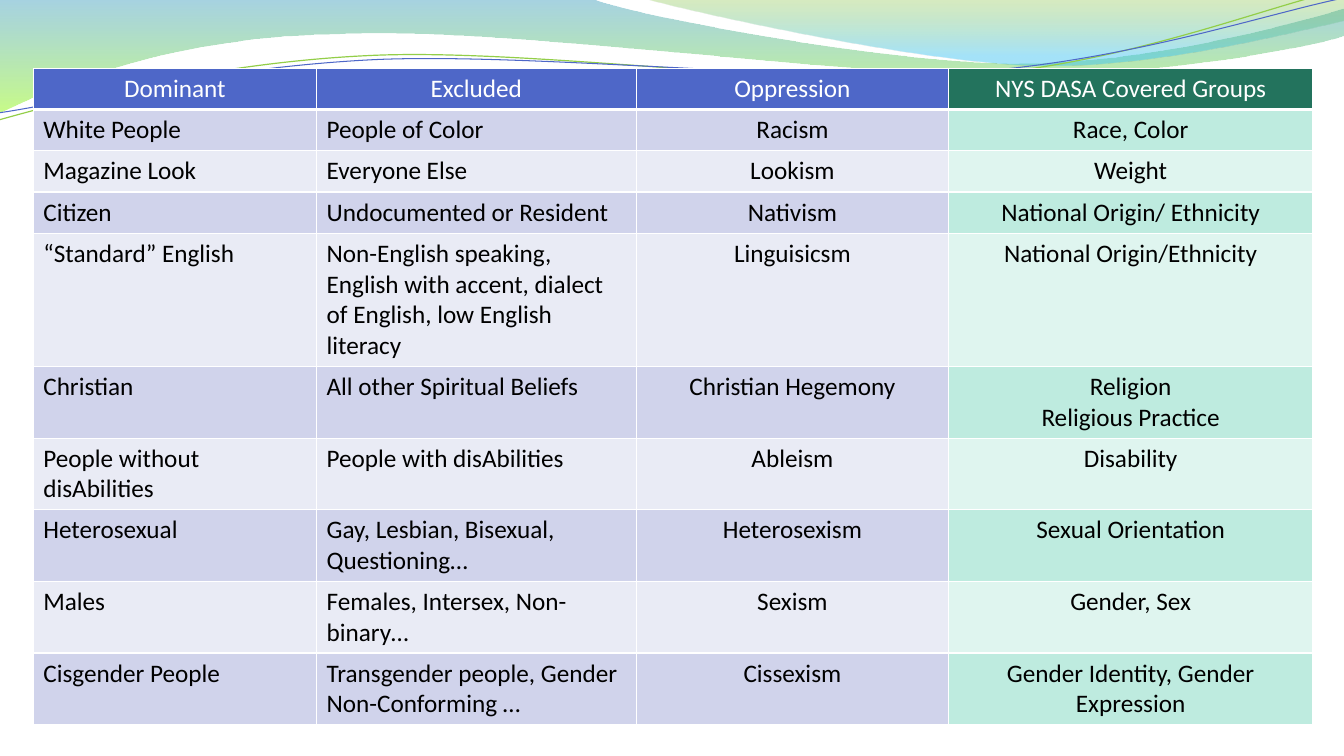
"""Build a slide comparing dominant and excluded groups under a wave banner."""
import math
from dataclasses import dataclass
from typing import Any, Optional

from lxml import etree
from pptx import Presentation
from pptx.dml.color import RGBColor
from pptx.enum import text
from pptx.oxml import ns
from pptx.util import Inches, Pt

COLOURS = {
    "white": "FFFFFF", "black": "000000", "blue": "4E67C8", "teal": "23735D",
    "lilac": "D0D3EB", "pale_lilac": "E9EBF5", "mint": "BEEBDF",
    "pale_mint": "DFF5EF", "sea": "3B9CBF", "lime": "9CFA24",
    "leaf": "7EBE2C", "sky": "39C1F1", "grass": "93CE48",
}
COLUMN_WIDTHS = (2.81, 3.17, 3.1, 3.61)
ROW_HEIGHTS = (0.31,) + (0.41,) * 9
LEFT, CENTER = text.PP_ALIGN.LEFT, text.PP_ALIGN.CENTER
ALIGNMENTS = (LEFT, LEFT, CENTER, CENTER)
CELL_FONT = {"name": "Calibri", "size": Pt(18), "bold": False}
TABLE_FORMAT = {"first_row": True, "horz_banding": True}
LINE_TILT = -2.7

ROWS = (
    ("Dominant", "Excluded", "Oppression", "NYS DASA Covered Groups"),
    ("White People", "People of Color", "Racism", "Race, Color"),
    ("Magazine Look", "Everyone Else", "Lookism", "Weight"),
    ("Citizen", "Undocumented or Resident", "Nativism", "National Origin/ Ethnicity"),
    ("“Standard” English",
     "Non-English speaking, English with accent, dialect of English, low English literacy",
     "Linguisicsm", "National Origin/Ethnicity"),
    ("Christian", "All other Spiritual Beliefs", "Christian Hegemony",
     "Religion\nReligious Practice"),
    ("People without disAbilities", "People with disAbilities", "Ableism", "Disability"),
    ("Heterosexual", "Gay, Lesbian, Bisexual, Questioning…", "Heterosexism",
     "Sexual Orientation"),
    ("Males", "Females, Intersex, Non-binary…", "Sexism", "Gender, Sex"),
    ("Cisgender People", "Transgender people, Gender Non-Conforming …", "Cissexism",
     "Gender Identity, Gender Expression"),
)


@dataclass(frozen=True)
class Stop:
    """One gradient stop with its opacity in percent."""
    position: float
    colour: str
    opacity: int


@dataclass(frozen=True)
class Wave:
    """An outline whose segments are lines (2 numbers) or curves (6 numbers)."""
    start: tuple[float, float]
    segments: tuple[tuple[float, ...], ...]
    stops: tuple[Stop, ...] = ()
    line: Optional[str] = None
    weight: float = 0
    pivot: tuple[float, float] = (0, 0)


WAVES = (
    Wave((0, 0), (
        (5.87, -0.01), (6.34, 0.17, 8.84, 0.63, 10.11, 0.63),
        (11.37, 0.63, 12.77, 0.26, 13.33, 0.09), (13.34, 0.36),
        (13.11, 0.44, 11.59, 0.76, 9.94, 0.75), (8.29, 0.75, 5.09, 0.28, 3.43, 0.34),
        (1.72, 0.36, 0.61, 0.83, -0.02, 1.13), (0, 0)),
        stops=(Stop(0, "sea", 45), Stop(1, "lime", 55))),
    Wave((6.38, -0.01), (
        (6.79, 0.11, 9.09, 0.62, 10.25, 0.65), (11.4, 0.69, 12.82, 0.32, 13.33, 0.21),
        (13.33, 0), (6.38, -0.01)),
        stops=(Stop(0, "leaf", 30), Stop(0.8, "sky", 45))),
    Wave((-0.01, 1.19), (
        (0.63, 1.01, 2.1, 0.62, 3.69, 0.55), (5.27, 0.48, 7.89, 0.87, 9.49, 0.76),
        (11.1, 0.66, 12.51, 0.08, 13.3, -0.1)),
        line="grass", weight=0.85, pivot=(6.65, 0.58)),
    Wave((-0.01, 1.12), (
        (0.62, 1.03, 2.18, 0.66, 3.77, 0.59), (5.37, 0.53, 7.96, 0.82, 9.55, 0.72),
        (11.14, 0.62, 12.55, 0.14, 13.33, -0.02)),
        line="blue", weight=0.75, pivot=(6.67, 0.59)),
)


def rgb(name: str) -> RGBColor:
    """Look up a named colour."""
    return RGBColor.from_string(COLOURS[name])


def apply_format(target: Any, values: dict[str, Any]) -> None:
    """Set every attribute in a dict of format values."""
    for name, value in values.items():
        setattr(target, name, value)


def place(wave: Wave, x: float, y: float) -> tuple[int, int]:
    """Locate a point of a wave before its shape is tilted."""
    angle = math.radians(-LINE_TILT if wave.line else 0)
    across, down = x - wave.pivot[0], y - wave.pivot[1]
    return (Inches(wave.pivot[0] + across * math.cos(angle) - down * math.sin(angle)),
            Inches(wave.pivot[1] + across * math.sin(angle) + down * math.cos(angle)))


def bend(shape: Any, wave: Wave) -> None:
    """Join the control points of each curved segment into one Bezier curve."""
    steps = iter(shape._element.findall(".//" + ns.qn("a:lnTo")))
    for segment in wave.segments:
        first = next(steps)
        if len(segment) == 6:
            first.tag_name = None
            curve = etree.Element(ns.qn("a:cubicBezTo"))
            first.addprevious(curve)
            for step in (first, next(steps), next(steps)):
                curve.append(step[0])
                step.getparent().remove(step)


def draw_wave(page: Any, wave: Wave) -> None:
    """Draw a gradient band or a thin curved line."""
    points = [place(wave, *segment[i:i + 2])
              for segment in wave.segments for i in range(0, len(segment), 2)]
    builder = page.shapes.build_freeform(*place(wave, *wave.start))
    builder.add_line_segments(points, close=bool(wave.stops))
    shape = builder.convert_to_shape()
    bend(shape, wave)
    shape.shadow.inherit = False
    if wave.line:
        shape.rotation = LINE_TILT
        shape.fill.background()
        shape.line.color.rgb = rgb(wave.line)
        shape.line.width = Pt(wave.weight)
        return
    shape.line.fill.background()
    shape.fill.gradient()
    shape.fill.gradient_angle = 270
    for target, stop in zip(shape.fill.gradient_stops, wave.stops):
        target.position = stop.position
        target.color.rgb = rgb(stop.colour)
    tints = shape._element.spPr.findall(".//" + ns.qn("a:srgbClr"))
    for tint, stop in zip(tints, wave.stops):
        etree.SubElement(tint, ns.qn("a:alpha"), val=str(stop.opacity * 1000))


def add_borders(cell: Any) -> None:
    """Give a header cell white borders, heavier at the bottom."""
    properties = cell._tc.get_or_add_tcPr()
    for index, side in enumerate("LRTB"):
        border = etree.Element(ns.qn(f"a:ln{side}"), w=str(Pt(3 if side == "B" else 1)))
        fill = etree.SubElement(border, ns.qn("a:solidFill"))
        etree.SubElement(fill, ns.qn("a:srgbClr"), val=COLOURS["white"])
        properties.insert(index, border)


def fill_name(row: int, column: int) -> str:
    """Pick the fill of a cell from its row band and column."""
    is_covered = column == len(COLUMN_WIDTHS) - 1
    if row == 0:
        return "teal" if is_covered else "blue"
    return ("pale_" if row % 2 == 0 else "") + ("mint" if is_covered else "lilac")


def draw_cell(cell: Any, row: int, column: int) -> None:
    """Write and format one table cell."""
    cell.text = ROWS[row][column]
    cell.fill.solid()
    cell.fill.fore_color.rgb = rgb(fill_name(row, column))
    if row == 0:
        add_borders(cell)
    for para in cell.text_frame.paragraphs:
        para.alignment = ALIGNMENTS[column] if row else CENTER
        for span in para.runs:
            apply_format(span.font, CELL_FONT)
            span.font.color.rgb = rgb("black" if row else "white")


def draw_table(page: Any) -> None:
    """Draw the table of groups."""
    frame = page.shapes.add_table(
        len(ROWS), len(COLUMN_WIDTHS), Inches(0.33), Inches(0.68), Inches(12.69), Inches(6.43))
    table = frame.table
    apply_format(table, TABLE_FORMAT)
    for column, width in zip(table.columns, COLUMN_WIDTHS):
        column.width = Inches(width)
    for row, height in zip(table.rows, ROW_HEIGHTS):
        row.height = Inches(height)
    frame.height = Inches(6.43)
    for row in range(len(ROWS)):
        for column in range(len(COLUMN_WIDTHS)):
            draw_cell(table.cell(row, column), row, column)


def main() -> None:
    """Build and save the deck."""
    deck = Presentation()
    apply_format(deck, {"slide_width": Inches(13.33), "slide_height": Inches(7.5)})
    page = deck.slides.add_slide(deck.slide_layouts[6])
    for wave in WAVES:
        draw_wave(page, wave)
    draw_table(page)
    deck.save("out.pptx")


if __name__ == "__main__":
    main()
